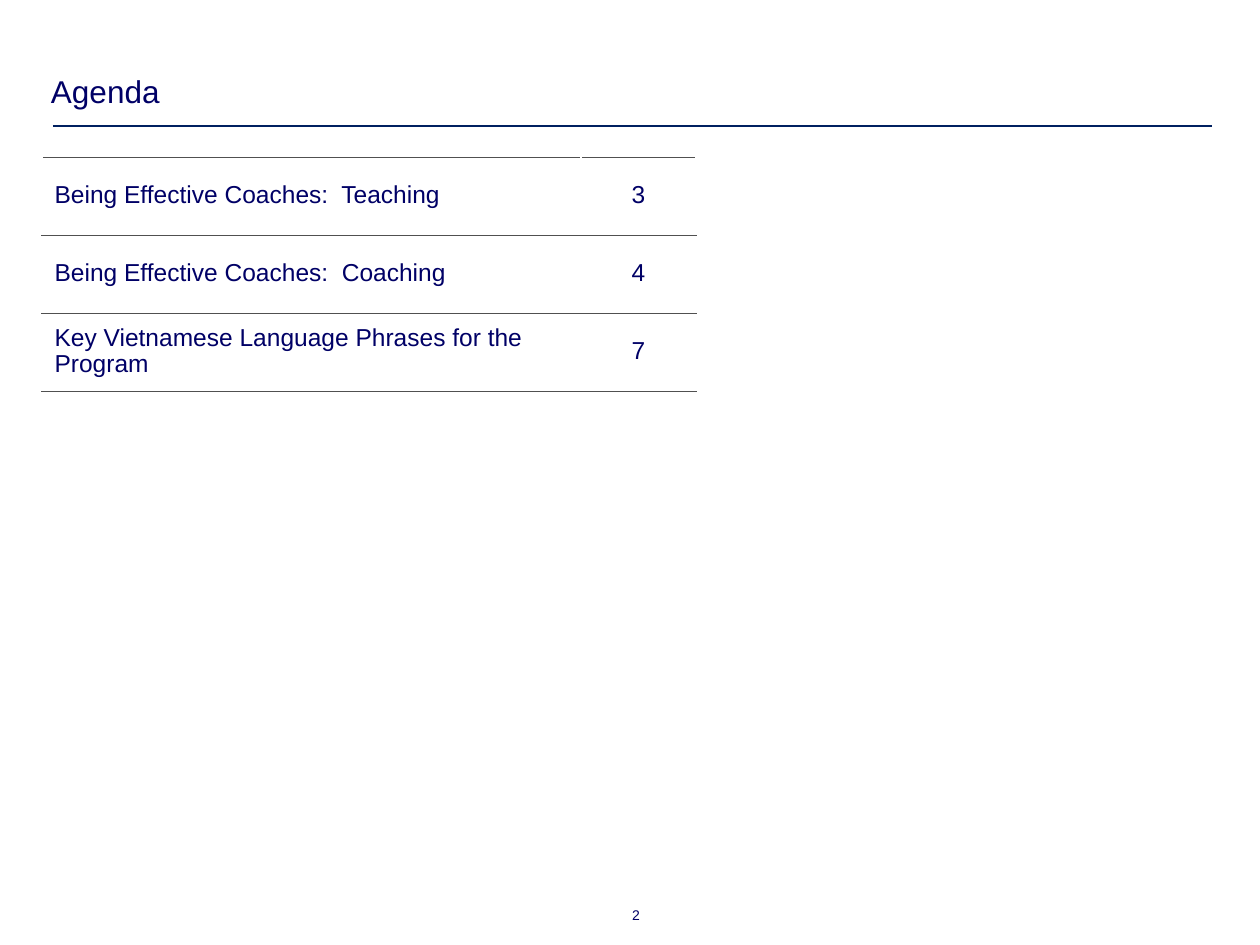
from dataclasses import dataclass

from lxml import etree
from pptx import Presentation
from pptx.dml.color import RGBColor
from pptx.enum.shapes import MSO_CONNECTOR
from pptx.enum.text import MSO_ANCHOR, PP_ALIGN
from pptx.oxml.ns import qn
from pptx.util import Emu, Pt

LEFT, CENTER, RIGHT = PP_ALIGN.LEFT, PP_ALIGN.CENTER, PP_ALIGN.RIGHT
TOP, MIDDLE, BOTTOM = MSO_ANCHOR.TOP, MSO_ANCHOR.MIDDLE, MSO_ANCHOR.BOTTOM
STRAIGHT = MSO_CONNECTOR.STRAIGHT

# Content
TITLE = "Agenda"
AGENDA = [
    ("Being Effective Coaches:  Teaching", "3"),
    ("Being Effective Coaches:  Coaching", "4"),
    ("Key Vietnamese Language Phrases for the Program", "7"),
]
PAGE_NUMBER = "2"

# Layout in px, 126 to the inch
SLIDE = (1260, 945)
TITLE_BOX = (45, 68, 1087, 49)
TITLE_INSET = 6
RULE = (53, 126, 1212, 126)
TABLE_ORIGIN = (42, 157)
COLUMNS = (539, 115)
ROW_HEIGHT = 78
PAGE_BOX = (514, 908, 126, 16)


@dataclass(frozen=True)
class Theme:
    font: str = "Arial"
    ink: str = "000066"
    rule: str = "002060"
    paper: str = "FFFFFF"
    row_line: str = "505050"
    title_size: int = 18
    agenda_size: int = 14
    page_size: int = 8
    spacing: float = 0.95
    rule_width: float = 1.5
    row_line_width: float = 0.5
    side_line_width: float = 1


THEME = Theme()


def px(value):
    return Emu(round(value * 914400 / 126))


def write(frame, text, size, align):
    paragraph = frame.paragraphs[0]
    paragraph.text = text
    paragraph.alignment = align
    paragraph.line_spacing = THEME.spacing
    paragraph.font.name = THEME.font
    paragraph.font.size = Pt(size)
    paragraph.font.color.rgb = RGBColor.from_string(THEME.ink)


def add_text(slide, box, text, size, align, anchor, inset=0):
    frame = slide.shapes.add_textbox(*map(px, box)).text_frame
    frame.word_wrap = True
    frame.vertical_anchor = anchor
    frame.margin_left = frame.margin_right = px(inset)
    frame.margin_top = frame.margin_bottom = px(inset)
    write(frame, text, size, align)


def set_borders(cell):
    sides = (THEME.paper, THEME.side_line_width)
    rows = (THEME.row_line, THEME.row_line_width)
    borders = (("a:lnL", sides), ("a:lnR", sides), ("a:lnT", rows), ("a:lnB", rows))
    properties = cell._tc.get_or_add_tcPr()
    for position, (tag, (color, width)) in enumerate(borders):
        line = etree.Element(qn(tag), w=str(Pt(width)))
        fill = etree.SubElement(line, qn("a:solidFill"))
        etree.SubElement(fill, qn("a:srgbClr"), val=color)
        properties.insert(position, line)


def add_rule(slide):
    rule = slide.shapes.add_connector(STRAIGHT, *map(px, RULE))
    rule.line.color.rgb = RGBColor.from_string(THEME.rule)
    rule.line.width = Pt(THEME.rule_width)
    etree.SubElement(rule._element.spPr, qn("a:effectLst"))


def add_agenda(slide):
    size = (sum(COLUMNS), ROW_HEIGHT * len(AGENDA))
    agenda = slide.shapes.add_table(
        len(AGENDA), len(COLUMNS), *map(px, TABLE_ORIGIN + size)
    ).table
    agenda.first_row = agenda.horz_banding = False
    for column, width in zip(agenda.columns, COLUMNS):
        column.width = px(width)
    for row, entry in zip(agenda.rows, AGENDA):
        row.height = px(ROW_HEIGHT)
        for cell, text, align in zip(row.cells, entry, (LEFT, CENTER)):
            cell.vertical_anchor = MIDDLE
            cell.fill.solid()
            cell.fill.fore_color.rgb = RGBColor.from_string(THEME.paper)
            write(cell.text_frame, text, THEME.agenda_size, align)
            set_borders(cell)


def main():
    deck = Presentation()
    deck.slide_width, deck.slide_height = map(px, SLIDE)
    slide = deck.slides.add_slide(deck.slide_layouts[6])

    # Page number, title and rule
    add_text(slide, PAGE_BOX, PAGE_NUMBER, THEME.page_size, RIGHT, TOP)
    add_rule(slide)
    add_text(slide, TITLE_BOX, TITLE, THEME.title_size, LEFT, BOTTOM, TITLE_INSET)

    # Agenda entries with their pages
    add_agenda(slide)

    deck.save("out.pptx")


if __name__ == "__main__":
    main()
